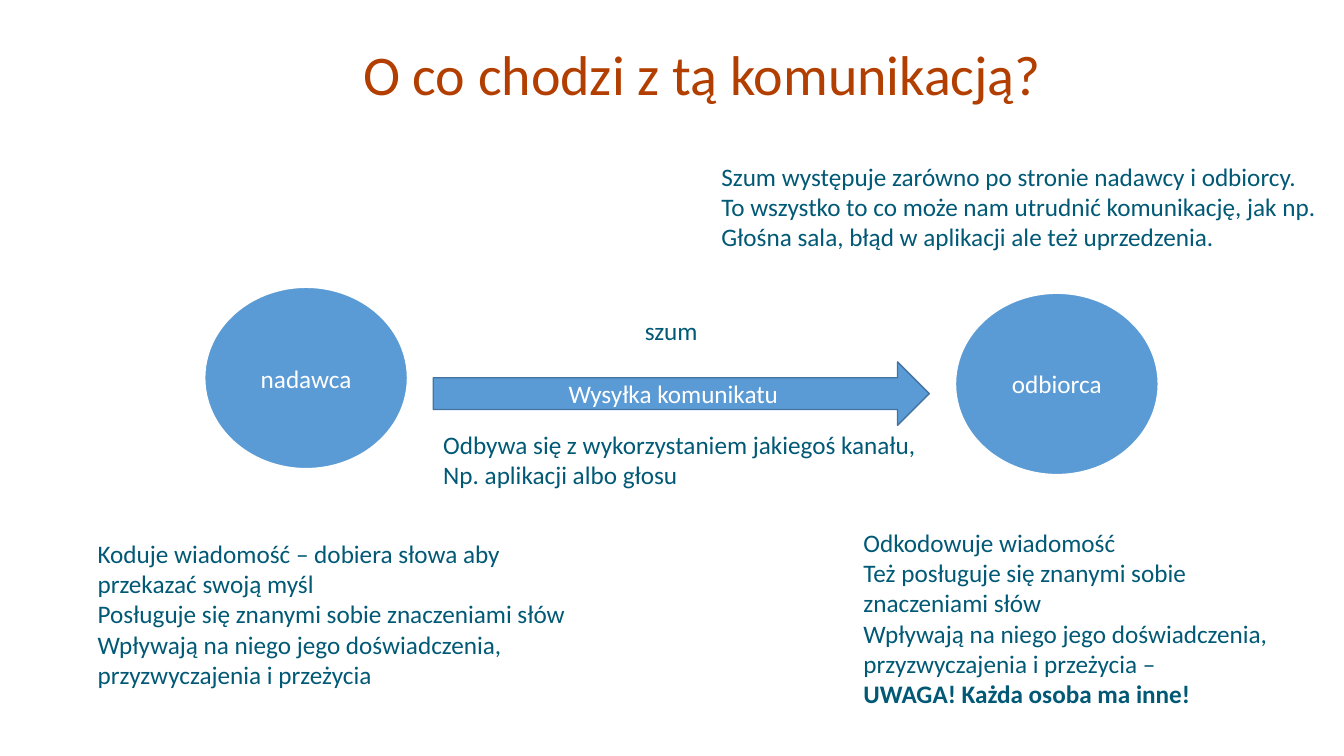
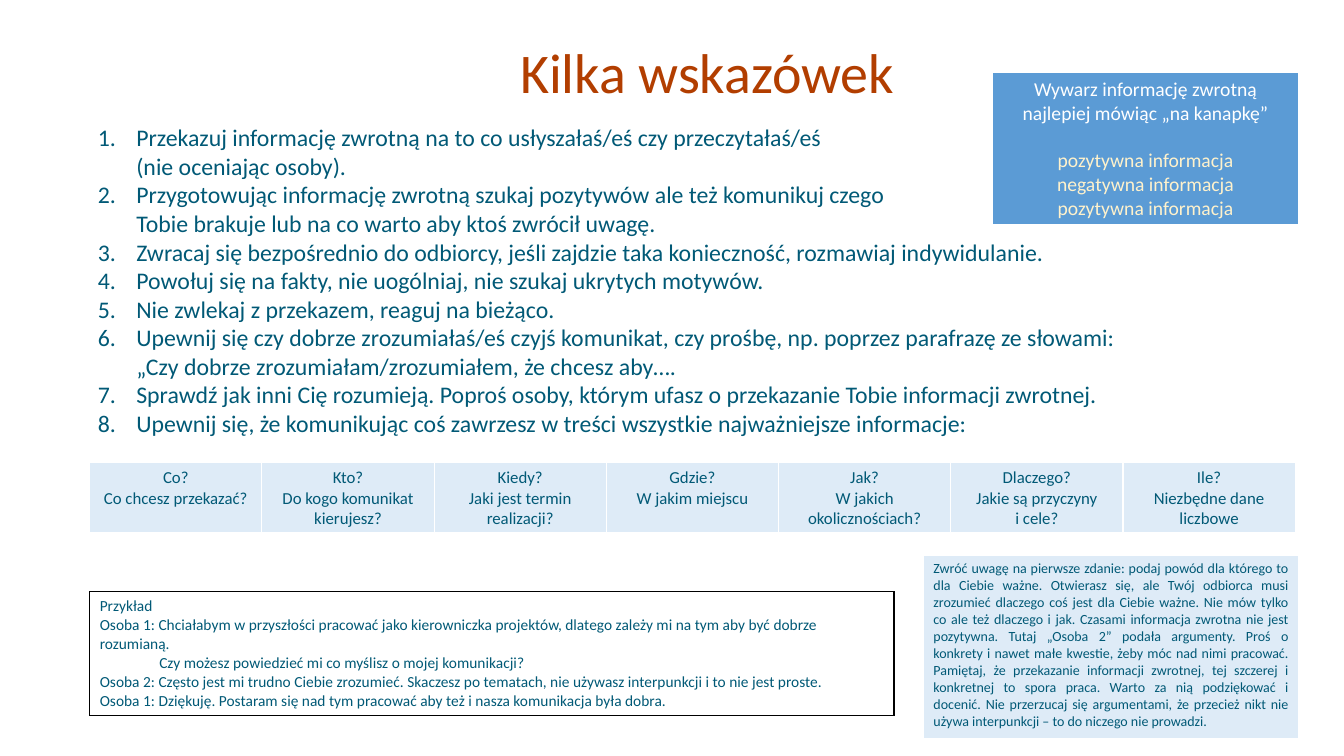
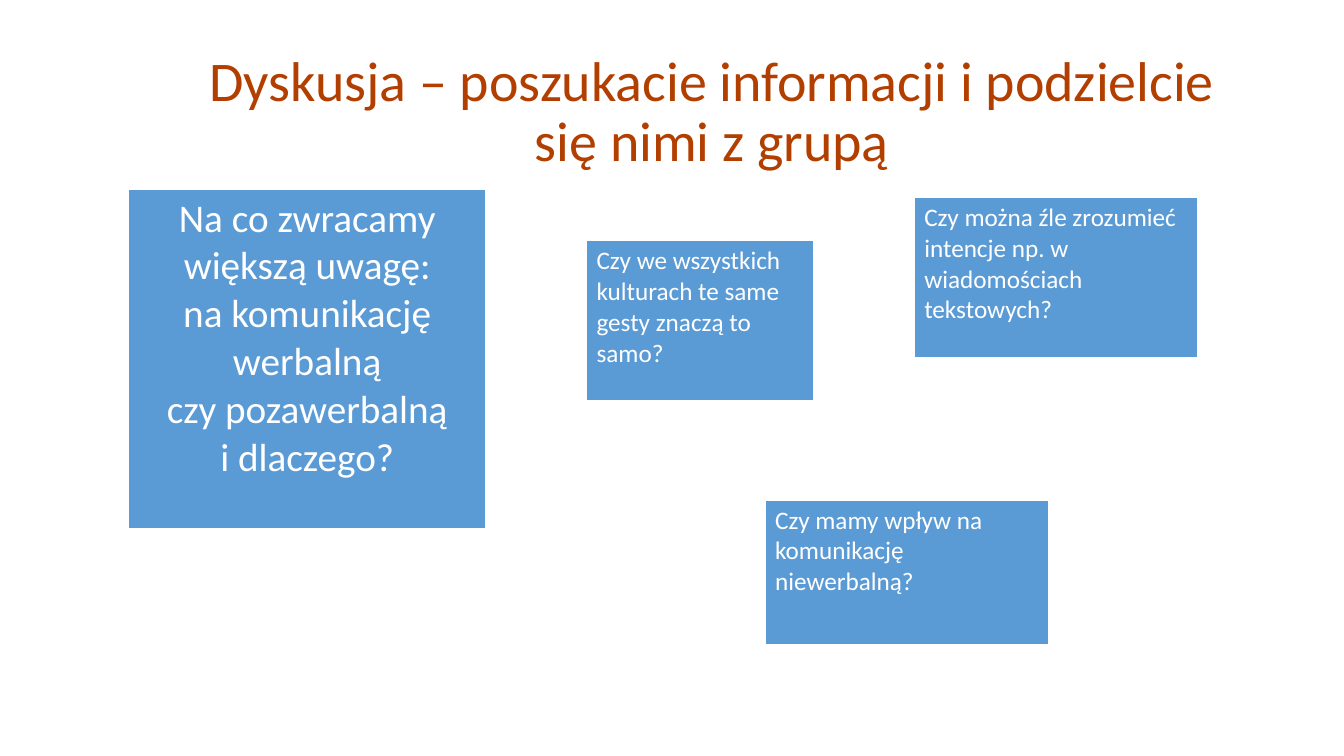
from dataclasses import dataclass

from pptx import Presentation
from pptx.dml.color import RGBColor
from pptx.enum.shapes import MSO_SHAPE
from pptx.enum.text import MSO_ANCHOR, MSO_AUTO_SIZE, PP_ALIGN
from pptx.oxml.ns import qn
from pptx.util import Cm, Pt
from lxml import etree

LEFT, CENTER, JUSTIFY = PP_ALIGN.LEFT, PP_ALIGN.CENTER, PP_ALIGN.JUSTIFY
MIDDLE, TOP = MSO_ANCHOR.MIDDLE, MSO_ANCHOR.TOP
NO_AUTOFIT = MSO_AUTO_SIZE.NONE
OVAL, ARROW = MSO_SHAPE.OVAL, MSO_SHAPE.RIGHT_ARROW

FONT = "Calibri"
COLORS = {
    "title": "B23E00",
    "text": "015976",
    "blue": "5B9BD5",
    "blue_edge": "43739E",
    "pale": "DEEBF7",
    "cream": "FFF2CC",
    "white": "FFFFFF",
    "black": "000000",
}
TITLE_SIZE = (27.2, 3.68)
CIRCLE_SIZE = (5.11, 4.57)
WHITE_EDGES = {"L": ("white", 1), "R": ("white", 1), "T": ("white", 1), "B": ("white", 3)}
BLACK_EDGES = {side: ("black", 1) for side in "LRTB"}


@dataclass
class Line:
    """A paragraph that differs from the style of its box."""
    text: str
    color: str = ""
    bold: bool = False
    indent: float = 0
    before: float = 0


def rgb(name):
    return RGBColor.from_string(COLORS[name])


def place(shape, left, top, width, height):
    shape.left, shape.top = Cm(left), Cm(top)
    shape.width, shape.height = Cm(width), Cm(height)


def add_run(paragraph, text, size, color, bold=False):
    run = paragraph.add_run()
    run.text = text
    run.font.name, run.font.size, run.font.bold = FONT, Pt(size), bold
    run.font.color.rgb = rgb(color)


def write(frame, lines, size, color="text", align=LEFT):
    for index, line in enumerate(lines):
        if isinstance(line, str):
            line = Line(line)
        paragraph = frame.add_paragraph() if index else frame.paragraphs[0]
        paragraph.alignment = align
        if line.before:
            paragraph.space_before = Pt(line.before)
        if line.indent:
            paragraph._p.get_or_add_pPr().set("marL", str(Cm(line.indent)))
        add_run(paragraph, line.text, size, line.color or color, line.bold)


# Kinds of element
def add_slide(prs, layout, title, left, top):
    slide = prs.slides.add_slide(prs.slide_layouts[layout])
    place(slide.shapes.title, left, top, *TITLE_SIZE)
    frame = slide.shapes.title.text_frame
    frame.vertical_anchor, frame.auto_size = MIDDLE, NO_AUTOFIT
    write(frame, [title], 40, "title", CENTER)
    frame.paragraphs[0].line_spacing = 0.9
    return slide


def add_text(slide, box, lines, wrap=True):
    frame = slide.shapes.add_textbox(*map(Cm, box)).text_frame
    frame.word_wrap = wrap
    write(frame, lines, 18)


def add_label_shape(slide, preset, box, label, edge):
    shape = slide.shapes.add_shape(preset, *map(Cm, box))
    shape.shadow.inherit = False
    shape.fill.solid()
    shape.fill.fore_color.rgb = rgb("blue")
    shape.line.color.rgb = rgb(edge)
    shape.line.width = Pt(1)
    shape.text_frame.vertical_anchor = MIDDLE
    write(shape.text_frame, [label], 18, "white", CENTER)


def set_edges(cell, edges):
    props = cell._tc.get_or_add_tcPr()
    for side, (color, width) in edges.items():
        edge = etree.SubElement(props, qn(f"a:ln{side}"), w=str(Pt(width)))
        fill = etree.SubElement(edge, qn("a:solidFill"))
        etree.SubElement(fill, qn("a:srgbClr"), val=COLORS[color])


def add_row_table(slide, box, cells, size, color="white", fill="blue",
                  align=LEFT, edges=WHITE_EDGES):
    table = slide.shapes.add_table(1, len(cells), *map(Cm, box)).table
    table.first_row = table.horz_banding = False
    for cell, lines in zip(table.rows[0].cells, cells):
        set_edges(cell, edges)
        if fill:
            cell.fill.solid()
            cell.fill.fore_color.rgb = rgb(fill)
        else:
            cell.fill.background()
        write(cell.text_frame, lines, size, color, align)


def add_numbered_list(slide, box, items, size):
    body = slide.placeholders[1]
    place(body, *box)
    frame = body.text_frame
    frame.auto_size, frame.vertical_anchor = NO_AUTOFIT, TOP
    hang = Cm(0.97)
    for index, item in enumerate(items):
        paragraph = frame.add_paragraph() if index else frame.paragraphs[0]
        props = paragraph._p.get_or_add_pPr()
        props.set("marL", str(hang))
        props.set("indent", str(-hang))
        etree.SubElement(props, qn("a:buFont"), typeface=FONT)
        etree.SubElement(props, qn("a:buAutoNum"), type="arabicPeriod")
        paragraph.space_before = Pt(0)
        for part, text in enumerate(item):
            if part:
                paragraph.add_line_break()
            add_run(paragraph, text, size, "text")


# Slides
def communication_slide(prs):
    slide = add_slide(prs, 5, "O co chodzi z tą komunikacją?", 4.09, 0.1)
    for label, left, top in (("nadawca", 5.16, 7.24), ("odbiorca", 24.08, 7.39)):
        add_label_shape(slide, OVAL, (left, top, *CIRCLE_SIZE), label, "white")
    add_label_shape(slide, ARROW, (10.92, 9.12, 12.5, 1.6), "Wysyłka komunikatu", "blue_edge")

    # Sender, channel, receiver and noise
    add_text(slide, (2.21, 13.44, 12.55, 4.11), [
        "Koduje wiadomość – dobiera słowa aby przekazać swoją myśl",
        "Posługuje się znanymi sobie znaczeniami słów",
        "Wpływają na niego jego doświadczenia, przyzwyczajenia i przeżycia",
    ])
    add_text(slide, (10.92, 10.69, 12.55, 1.8), [
        "Odbywa się z wykorzystaniem jakiegoś kanału,",
        "Np. aplikacji albo głosu",
    ], wrap=False)
    add_text(slide, (21.51, 13.16, 11.66, 4.88), [
        "Odkodowuje wiadomość",
        "Też posługuje się znanymi sobie znaczeniami słów",
        "Wpływają na niego jego doświadczenia, przyzwyczajenia i przeżycia –",
        Line("UWAGA! Każda osoba ma inne!", bold=True),
    ])
    add_text(slide, (16, 7.82, 1.85, 1.02), ["szum"], wrap=False)
    add_text(slide, (17.93, 3.94, 15.65, 2.57), [
        "Szum występuje zarówno po stronie nadawcy i odbiorcy.",
        "To wszystko to co może nam utrudnić komunikację, jak np.",
        "Głośna sala, błąd w aplikacji ale też uprzedzenia.",
    ], wrap=False)


def tips_slide(prs):
    slide = add_slide(prs, 1, "Kilka wskazówek", 4.22, 0.05)
    add_numbered_list(slide, (2.21, 2.97, 29.46, 8.6), [
        ["Przekazuj informację zwrotną na to co usłyszałaś/eś czy przeczytałaś/eś",
         "(nie oceniając osoby)."],
        ["Przygotowując informację zwrotną szukaj pozytywów ale też komunikuj czego",
         "Tobie brakuje lub na co warto aby ktoś zwrócił uwagę."],
        ["Zwracaj się bezpośrednio do odbiorcy, jeśli zajdzie taka konieczność, "
         "rozmawiaj indywidulanie."],
        ["Powołuj się na fakty, nie uogólniaj, nie szukaj ukrytych motywów."],
        ["Nie zwlekaj z przekazem, reaguj na bieżąco."],
        ["Upewnij się czy dobrze zrozumiałaś/eś czyjś komunikat, czy prośbę, "
         "np. poprzez parafrazę ze słowami:",
         "„Czy dobrze zrozumiałam/zrozumiałem, że chcesz aby…."],
        ["Sprawdź jak inni Cię rozumieją. Poproś osoby, którym ufasz o przekazanie "
         "Tobie informacji zwrotnej."],
        ["Upewnij się, że komunikując coś zawrzesz w treści wszystkie "
         "najważniejsze informacje:"],
    ], 17)

    # Feedback sandwich
    add_row_table(slide, (25.02, 1.83, 7.7, 3.76), [[
        "Wywarz informację zwrotną najlepiej mówiąc „na kanapkę”",
        Line("pozytywna informacja", "cream", before=17),
        Line("negatywna informacja", "cream"),
        Line("pozytywna informacja", "cream"),
    ]], 14, align=CENTER)

    # Key questions
    add_row_table(slide, (2.26, 11.66, 30.38, 1.78), [
        ["Co?", "Co chcesz przekazać?"],
        ["Kto?", "Do kogo komunikat kierujesz?"],
        ["Kiedy?", "Jaki jest termin realizacji?"],
        ["Gdzie?", "W jakim miejscu"],
        ["Jak?", "W jakich okolicznościach?"],
        ["Dlaczego?", "Jakie są przyczyny", "i cele?"],
        ["Ile?", "Niezbędne dane liczbowe"],
    ], 12, "text", "pale", CENTER)

    # Example dialogue and its commentary
    add_row_table(slide, (2.26, 14.91, 20.27, 3.07), [[
        "Przykład",
        "Osoba 1: Chciałabym w przyszłości pracować jako kierowniczka projektów, "
        "dlatego zależy mi na tym aby być dobrze rozumianą.",
        Line("Czy możesz powiedzieć mi co myślisz o mojej komunikacji?", indent=1.5),
        "Osoba 2: Często jest mi trudno Ciebie zrozumieć. Skaczesz po tematach, "
        "nie używasz interpunkcji i to nie jest proste.",
        "Osoba 1: Dziękuję. Postaram się nad tym pracować aby też i nasza "
        "komunikacja była dobra.",
    ]], 11, "text", None, edges=BLACK_EDGES)
    add_row_table(slide, (23.27, 14, 9.45, 4.65), [[
        "Zwróć uwagę na pierwsze zdanie: podaj powód dla którego to dla Ciebie ważne. "
        "Otwierasz się, ale Twój odbiorca musi zrozumieć dlaczego coś jest dla Ciebie "
        "ważne. Nie mów tylko co ale też dlaczego i jak. Czasami informacja zwrotna nie "
        "jest pozytywna. Tutaj „Osoba 2” podała argumenty. Proś o konkrety i nawet małe "
        "kwestie, żeby móc nad nimi pracować. Pamiętaj, że przekazanie informacji "
        "zwrotnej, tej szczerej i konkretnej to spora praca. Warto za nią podziękować "
        "i docenić. Nie przerzucaj się argumentami, że przecież nikt nie używa "
        "interpunkcji – to do niczego nie prowadzi.",
    ]], 10, "text", "pale", JUSTIFY)


def discussion_slide(prs):
    slide = add_slide(
        prs, 5, "Dyskusja – poszukacie informacji i podzielcie się nimi z grupą", 4.34, 1.02)
    add_row_table(slide, (3.23, 4.78, 9.02, 8.56), [[
        "Na co zwracamy większą uwagę:",
        "na komunikację werbalną",
        "czy pozawerbalną",
        "i dlaczego?",
    ]], 28, align=CENTER)
    for box, question in (
        ((19.28, 12.6, 7.14, 3.68), "Czy mamy wpływ na komunikację niewerbalną?"),
        ((14.78, 6.07, 5.72, 4.06),
         "Czy we wszystkich kulturach te same gesty znaczą to samo?"),
        ((23.04, 4.98, 7.14, 4.06),
         "Czy można źle zrozumieć intencje np. w wiadomościach tekstowych?"),
    ):
        add_row_table(slide, box, [[question]], 18)


def main():
    prs = Presentation()
    prs.slide_width, prs.slide_height = Cm(33.87), Cm(19.05)
    communication_slide(prs)
    tips_slide(prs)
    discussion_slide(prs)
    prs.save("out.pptx")


if __name__ == "__main__":
    main()
